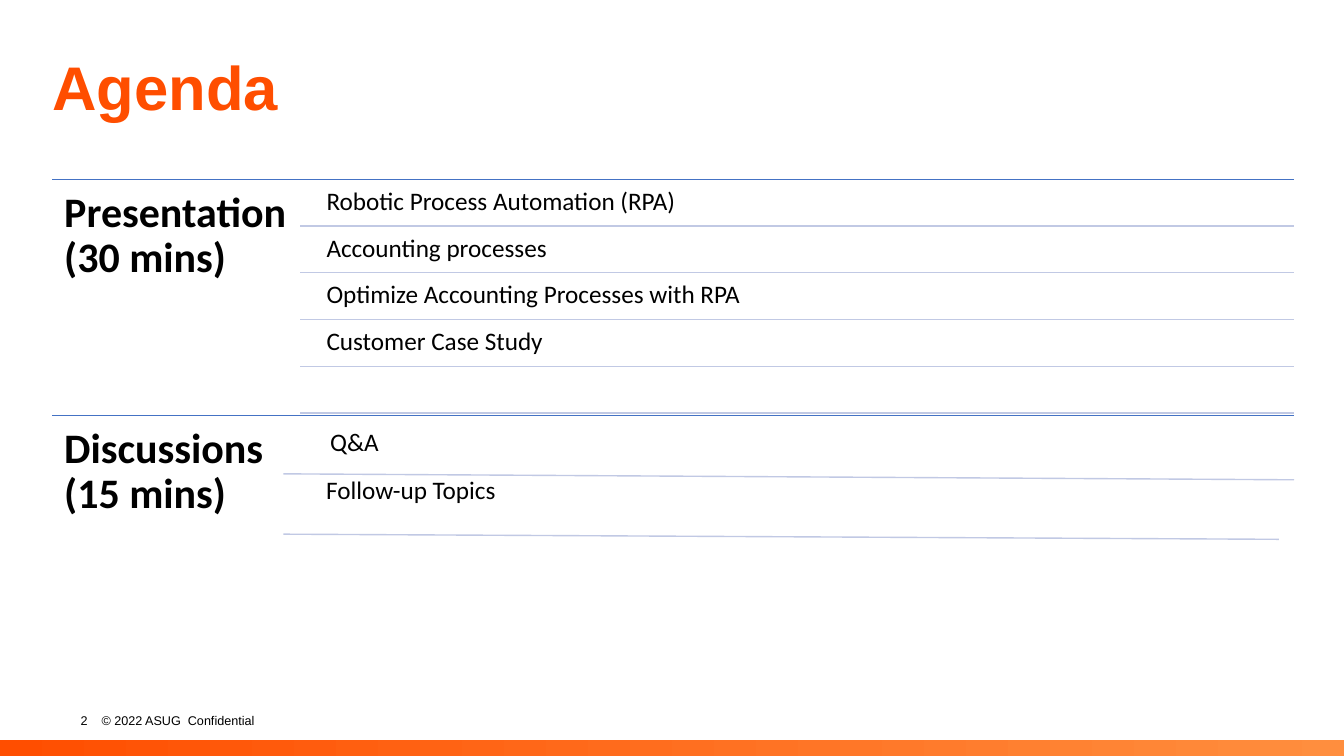
from dataclasses import dataclass

from lxml import etree
from pptx import Presentation
from pptx.dml.color import RGBColor
from pptx.enum.shapes import MSO_CONNECTOR, MSO_SHAPE
from pptx.enum.text import MSO_ANCHOR
from pptx.oxml.ns import qn
from pptx.util import Cm, Pt

LINE = MSO_CONNECTOR.STRAIGHT
RECT = MSO_SHAPE.RECTANGLE
TOP = MSO_ANCHOR.TOP
MID = MSO_ANCHOR.MIDDLE


@dataclass
class Theme:
    head: str = "Arial"
    body: str = "Calibri"
    brand: str = "FF4E00"
    glow: str = "FF8E3E"
    ink: str = "000000"
    rule: str = "4472C4"
    pale: str = "C1C9E4"
    title: int = 44
    topic: int = 30
    entry: int = 18
    foot: int = 9


class Page:
    def __init__(self, deck, theme):
        self.theme = theme
        self.slide = deck.slides.add_slide(deck.slide_layouts[6])

    def text(self, words, box, size, font, color=None, bold=False,
             inset=0.0, left=None, space=0.9, anchor=TOP, tab=None):
        frame = self.slide.shapes.add_textbox(*map(Cm, box)).text_frame
        frame.word_wrap = True
        frame.vertical_anchor = anchor
        frame.margin_top = frame.margin_bottom = frame.margin_right = Cm(inset)
        frame.margin_left = Cm(inset if left is None else left)
        frame.text = words
        para = frame.paragraphs[0]
        para.line_spacing = space
        if tab:
            stops = etree.SubElement(para._p.get_or_add_pPr(), qn("a:tabLst"))
            etree.SubElement(stops, qn("a:tab"), pos=str(Cm(tab)), algn="l")
        for run in para.runs:
            run.font.name = font
            run.font.size = Pt(size)
            run.font.bold = bold
            run.font.color.rgb = RGBColor.from_string(color or self.theme.ink)

    def line(self, x1, y1, x2, y2, color, width):
        rule = self.slide.shapes.add_connector(LINE, *map(Cm, (x1, y1, x2, y2)))
        rule.line.color.rgb = RGBColor.from_string(color)
        rule.line.width = Pt(width)
        etree.SubElement(rule._element.spPr, qn("a:effectLst"))

    def band(self, box, colors):
        bar = self.slide.shapes.add_shape(RECT, *map(Cm, box))
        bar.shadow.inherit = False
        bar.line.fill.background()
        bar.fill.gradient()
        bar.fill.gradient_angle = 0
        for stop, color in zip(bar.fill.gradient_stops, colors):
            stop.color.rgb = RGBColor.from_string(color)

    def topic(self, words, top, width):
        """Section heading under a full-width rule."""
        look = self.theme
        self.line(EDGE, top, END, top, look.rule, 0.5)
        self.text(words, (EDGE, top, width, 5.97), look.topic, look.body,
                  bold=True, inset=0.3)

    def entry(self, words, box, left=None):
        look = self.theme
        self.text(words, box, look.entry, look.body, inset=0.18, left=left)


EDGE, END = 1.32, 32.61
STEP = 1.18
TALKS = ["Robotic Process Automation (RPA)", "Accounting processes",
         "Optimize Accounting Processes with RPA", "Customer Case Study", None]


def main():
    deck = Presentation()
    deck.slide_width, deck.slide_height = Cm(33.87), Cm(19.05)
    look = Theme()
    page = Page(deck, look)

    # Footer
    page.band((0, 18.65, 33.87, 0.4), (look.brand, look.glow))
    page.text("2\t© 2022 ASUG  Confidential", (1.78, 17.83, 7.26, 0.64),
              look.foot, look.head, inset=0.13, left=0.25, space=1.0,
              anchor=MID, tab=0.53)

    # Title
    page.text("Agenda", (EDGE, 1.47, 31.29, 1.63), look.title, look.head,
              color=look.brand, bold=True, anchor=MID)

    # Presentation, one ruled row per talk
    page.topic("Presentation (30 mins)", 4.52, 6.25)
    for row, talk in enumerate(TALKS):
        top = 4.57 + row * STEP
        if talk:
            page.entry(talk, (8.05, top, 24.56, 1.12))
        base = top + 1.12
        page.line(7.57, base, END, base, look.pale, 1)

    # Discussions, with slightly sloping rules
    page.topic("Discussions (15 mins)", 10.46, 5.82)
    page.entry("Q&A", (7.57, 10.64, 23.98, 3.2), left=0.75)
    page.line(7.14, 11.94, END, 12.09, look.pale, 1)
    page.entry("Follow-up Topics", (7.32, 11.86, 22.78, 2.01), left=0.9)
    page.line(7.14, 13.46, 32.23, 13.59, look.pale, 1)

    deck.save("out.pptx")


if __name__ == "__main__":
    main()
